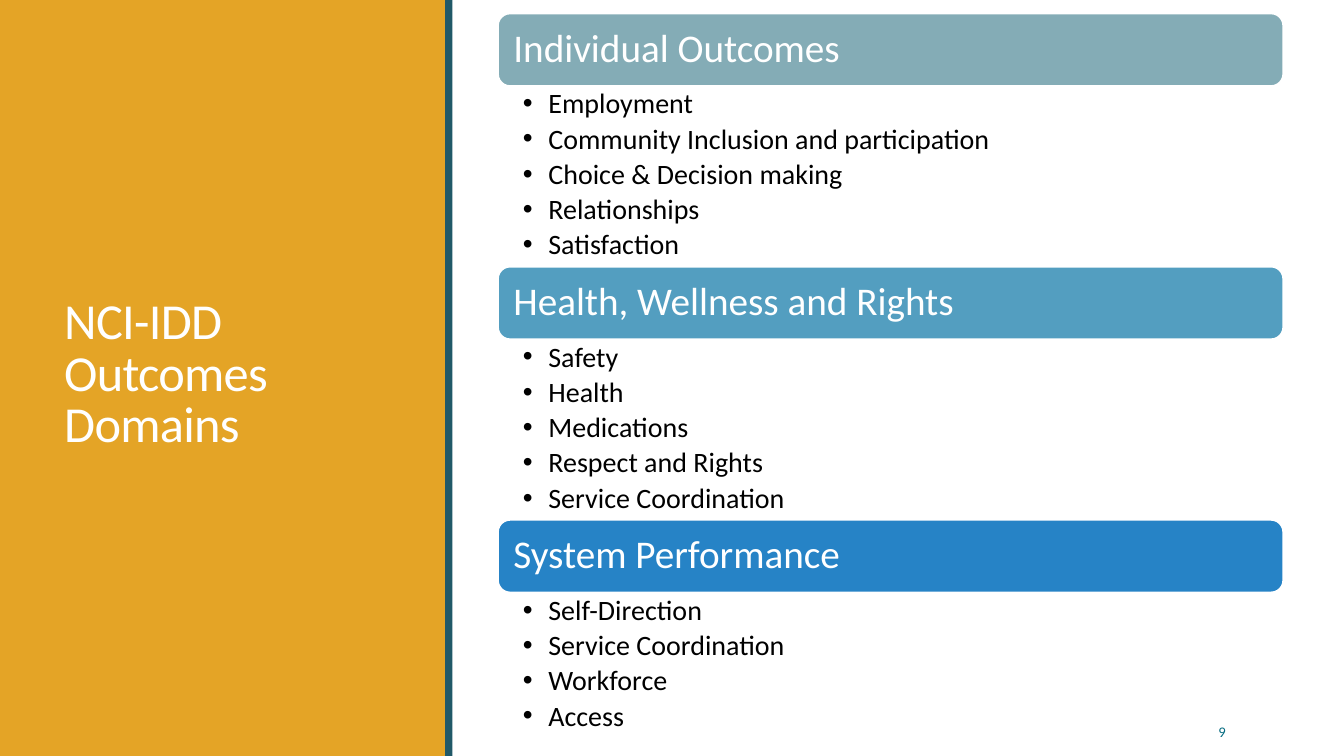
from pptx import Presentation
from pptx import util as u
from pptx.dml.color import RGBColor
from pptx.enum import shapes, text
from pptx.oxml.ns import qn
from lxml import etree

HUES = {"gold": "E4A426", "teal": "215968", "white": "FFFFFF", "black": "000000",
        "num": "076D82", "sage": "84ACB6", "sky": "539EC0", "blue": "2683C6"}

DOMAINS = [
    ("Individual Outcomes", "sage",
     ["Employment", "Community Inclusion and participation",
      "Choice & Decision making", "Relationships", "Satisfaction"]),
    ("Health, Wellness and Rights", "sky",
     ["Safety", "Health", "Medications", "Respect and Rights",
      "Service Coordination"]),
    ("System Performance", "blue",
     ["Self-Direction", "Service Coordination", "Workforce", "Access"]),
]


def write(frame, lines, size=20, hue="black", lead=0.9, after=0, align="LEFT",
          anchor="TOP", pad=(0.25, 0.13, 0.25, 0.13), dots=False, track=0):
    """Fill a text frame with one paragraph per line."""
    frame.word_wrap = True
    frame.vertical_anchor = getattr(text.MSO_ANCHOR, anchor)
    (frame.margin_left, frame.margin_top,
     frame.margin_right, frame.margin_bottom) = map(u.Cm, pad)
    for i, line in enumerate(lines):
        para = frame.add_paragraph() if i else frame.paragraphs[0]
        para.alignment = getattr(text.PP_ALIGN, align)
        para.line_spacing = lead
        para.space_after = u.Pt(after)
        if dots:
            props = para._p.get_or_add_pPr()
            props.set("marL", str(u.Cm(0.64)))
            props.set("indent", str(-u.Cm(0.64)))
            etree.SubElement(props, qn("a:buFont")).set("typeface", "Arial")
            etree.SubElement(props, qn("a:buChar")).set("char", "•")
        run = para.add_run()
        run.text = line
        run.font.name = "Calibri"
        run.font.size = u.Pt(size)
        run.font.color.rgb = RGBColor.from_string(HUES[hue])
        if track:
            run._r.get_or_add_rPr().set("spc", str(track))


class Deck:
    def __init__(self):
        self.file = Presentation()
        self.file.slide_width = u.Cm(33.87)
        self.file.slide_height = u.Cm(19.05)
        self.slide = self.file.slides.add_slide(self.file.slide_layouts[6])

    def block(self, box, hue, kind="RECTANGLE", edge=None):
        shape = self.slide.shapes.add_shape(
            getattr(shapes.MSO_SHAPE, kind), *map(u.Cm, box))
        shape.shadow.inherit = False
        shape.fill.solid()
        shape.fill.fore_color.rgb = RGBColor.from_string(HUES[hue])
        if edge:
            shape.line.color.rgb = RGBColor.from_string(HUES[edge])
            shape.line.width = u.Pt(1.25)
        else:
            shape.line.fill.background()
        return shape

    def label(self, box, lines, **form):
        area = self.slide.shapes.add_textbox(*map(u.Cm, box))
        write(area.text_frame, lines, **form)

    def domain(self, top, name, hue, items):
        left, width, head = 12.55, 19.79, 1.83
        bar = self.block((left, top, width, head), hue, "ROUNDED_RECTANGLE", "white")
        write(bar.text_frame, [name], size=28, hue="white", anchor="MIDDLE",
              pad=(0.3, 0.3, 0.3, 0.3))
        self.label((left, top + head, width, 0.91 * len(items)), items,
                   after=3.6, pad=(0.63, 0.09, 0.4, 0.09), dots=True)


def main():
    deck = Deck()

    # Side panel with title
    deck.block((0, 0, 11.25, 19.05), "gold")
    deck.label((1.37, 1.45, 8.56, 16.03), ["NCI-IDD Outcomes Domains"], size=36,
               hue="white", lead=0.85, anchor="MIDDLE", track=-50)
    deck.block((11.22, 0, 0.18, 19.05), "teal")

    # Slide number
    deck.label((28.12, 17.93, 3.02, 1.02), ["9"], size=10.5, hue="num", lead=1.0,
               align="RIGHT", anchor="MIDDLE")

    # Domains at an even pitch
    for i, (name, hue, items) in enumerate(DOMAINS):
        deck.domain(0.34 + 6.38 * i, name, hue, items)

    deck.file.save("out.pptx")


if __name__ == "__main__":
    main()
